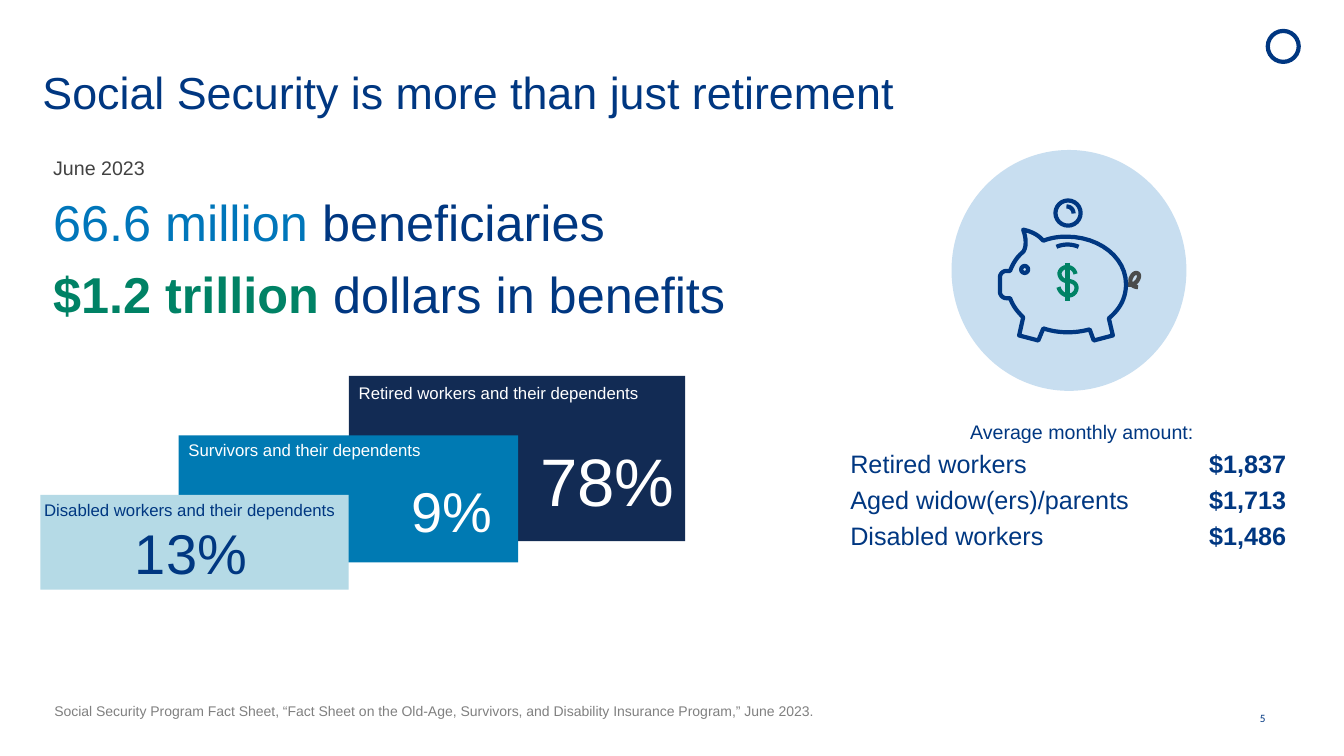
from dataclasses import dataclass
from lxml.etree import SubElement
from pptx import Presentation
from pptx.dml.color import RGBColor
from pptx.enum.shapes import MSO_SHAPE
from pptx.enum.text import MSO_ANCHOR, PP_ALIGN
from pptx.oxml.ns import qn
from pptx.util import Cm, Pt


@dataclass(frozen=True)
class Theme:
    font: str = "Arial"
    number_font: str = "Calibri"
    navy: str = "003781"
    midnight: str = "122B54"
    blue: str = "007AB3"
    bright: str = "0076BA"
    green: str = "008265"
    sky: str = "B5DAE6"
    pale: str = "C8DEF0"
    charcoal: str = "424242"
    tail: str = "4B4C4C"
    gray: str = "808080"
    white: str = "FFFFFF"
    title: int = 32
    headline: int = 36
    figure: int = 48
    small_figure: int = 40
    row: int = 18
    intro: int = 14
    label: int = 12
    source: int = 10
    number: int = 8
    stroke: int = 3


theme = Theme()

TITLE = "Social Security is more than just retirement"
DATE = "June 2023"
HEADLINES = [
    ("66.6 million ", theme.bright, False, "beneficiaries"),
    ("$1.2 trillion ", theme.green, True, "dollars in benefits"),
]
AMOUNT_HEADING = "Average monthly amount:"
AMOUNTS = [
    ("Retired workers", "$1,837"),
    ("Aged widow(ers)/parents", "$1,713"),
    ("Disabled workers", "$1,486"),
]
SOURCE = ("Social Security Program Fact Sheet, “Fact Sheet on the Old-Age, Survivors, "
          "and Disability Insurance Program,” June 2023.")
PAGE_NUMBER = "5"

CARDS = [
    ("Retired workers and their dependents", "78%", theme.midnight, theme.white, theme.figure,
     (8.79, 9.47, 8.48, 4.17), (8.79, 9.58, 7.75, 1.02), (12.93, 10.77, 4.32, 2.87)),
    ("Survivors and their dependents", "9%", theme.blue, theme.white, theme.small_figure,
     (4.5, 10.97, 8.56, 3.2), (4.5, 11.02, 9.04, 1.17), (8.48, 11.33, 4.17, 3.25)),
    ("Disabled workers and their dependents", "13%", theme.sky, theme.navy, theme.small_figure,
     (1.02, 12.47, 7.77, 2.39), (0.86, 12.52, 8.2, 1.19), (2.41, 12.83, 4.06, 2.39)),
]

ICON_LEFT, ICON_TOP, ICON_UNIT = 25.15, 5.0, 0.0254
ICON_RINGS = [(57, 2, 25), (23, 67, 7)]
ICON_STROKES = [
    (theme.tail, False, [(127, 85), (135, 88, 140, 81, 140, 77), (140, 73, 135, 73, 133, 77),
                         (129, 83, 133, 88, 139, 88)]),
    (theme.navy, True, [
        (2, 78), (2, 75, 5, 72, 8, 72), (12, 72), (15, 64, 19, 58, 25, 53),
        (26, 52, 30, 45, 25, 31), (38, 34, 42, 39, 45, 42), (53, 39, 60, 38, 68, 38),
        (101, 38, 127, 59, 127, 85), (127, 98, 122, 109, 110, 119), (114, 136), (95, 141),
        (91, 130), (76, 134, 60, 134, 45, 129), (40, 141), (21, 136), (25, 118),
        (19, 112, 15, 107, 12, 99), (8, 99), (5, 99, 2, 96, 2, 93)]),
    (theme.navy, False, [(58, 48), (65, 45, 73, 45, 80, 48)]),
    (theme.navy, False, [(68, 8), (72, 8, 75, 11, 75, 15)]),
    (theme.green, False, [(69, 64), (69, 102)]),
    (theme.green, False, [(77, 75), (75, 66, 63, 66, 61, 74), (61, 78, 64, 82, 69, 82),
                          (75, 82, 78, 85, 78, 89), (77, 99, 63, 99, 60, 88)]),
]
CURVE_STEPS = 12

deck = Presentation()
deck.slide_width, deck.slide_height = Cm(33.87), Cm(19.05)
page = deck.slides.add_slide(deck.slide_layouts[6])


def color(value):
    return RGBColor.from_string(value)


def text_box(place, anchor=MSO_ANCHOR.TOP, margins=(0.25, 0.13)):
    frame = page.shapes.add_textbox(*map(Cm, place)).text_frame
    frame.word_wrap = True
    frame.vertical_anchor = anchor
    frame.margin_left = frame.margin_right = Cm(margins[0])
    frame.margin_top = frame.margin_bottom = Cm(margins[1])
    return frame


def add_para(frame, spans, align=PP_ALIGN.LEFT, spacing=0.9, before=0, after=0, font=theme.font):
    first = frame.paragraphs[0]
    para = frame.add_paragraph() if first.runs else first
    para.alignment, para.line_spacing = align, spacing
    para.space_before, para.space_after = Pt(before), Pt(after)
    for text, size, tint, bold in spans:
        span = para.add_run()
        span.text = text
        span.font.name, span.font.size, span.font.bold = font, Pt(size), bold
        span.font.color.rgb = color(tint)
    return para


def add_tab(para, position):
    stops = SubElement(para._p.get_or_add_pPr(), qn("a:tabLst"))
    SubElement(stops, qn("a:tab"), pos=str(Cm(position)), algn="l")


def paint(shape, fill=None, line=None):
    shape.shadow.inherit = False
    if fill:
        shape.fill.solid()
        shape.fill.fore_color.rgb = color(fill)
    else:
        shape.fill.background()
    if line:
        shape.line.color.rgb = color(line)
        shape.line.width = Pt(theme.stroke)
        SubElement(shape.line._get_or_add_ln(), qn("a:round"))
    else:
        shape.line.fill.background()


def add_preset(kind, place, fill=None, line=None):
    paint(page.shapes.add_shape(kind, *map(Cm, place)), fill, line)


def trace(segments):
    points = [segments[0]]
    for segment in segments[1:]:
        if len(segment) == 2:
            points.append(segment)
            continue
        knots = [points[-1], segment[:2], segment[2:4], segment[4:]]
        for step in range(1, CURVE_STEPS + 1):
            t = step / CURVE_STEPS
            weights = ((1 - t) ** 3, 3 * t * (1 - t) ** 2, 3 * t * t * (1 - t), t ** 3)
            points.append(tuple(sum(w * knot[axis] for w, knot in zip(weights, knots))
                                for axis in (0, 1)))
    return points


def icon_point(x, y):
    return Cm(ICON_LEFT + x * ICON_UNIT), Cm(ICON_TOP + y * ICON_UNIT)


def add_piggy_bank():
    add_preset(MSO_SHAPE.OVAL, (23.98, 3.78, 5.92, 6.07), theme.pale)
    for tint, closed, segments in ICON_STROKES:
        points = [icon_point(*point) for point in trace(segments)]
        outline = page.shapes.build_freeform(*points[0])
        outline.add_line_segments(points[1:], close=closed)
        paint(outline.convert_to_shape(), line=tint)
    for x, y, size in ICON_RINGS:
        place = (ICON_LEFT + x * ICON_UNIT, ICON_TOP + y * ICON_UNIT,
                 size * ICON_UNIT, size * ICON_UNIT)
        add_preset(MSO_SHAPE.OVAL, place, line=theme.navy)


add_preset(MSO_SHAPE.OVAL, (31.95, 0.78, 0.78, 0.78), line=theme.navy)
add_para(text_box((1.07, 0.74, 30.43, 2.26), MSO_ANCHOR.BOTTOM, (0, 0)),
         [(TITLE, theme.title, theme.navy, False)])

summary = text_box((1.09, 3.78, 22, 6.5))
add_para(summary, [(DATE, theme.intro, theme.charcoal, False)], spacing=1.05)
for amount, tint, bold, subject in HEADLINES:
    add_para(summary, [(amount, theme.headline, tint, bold),
                       (subject, theme.headline, theme.navy, False)], spacing=1.05, before=6)

add_piggy_bank()

monthly = text_box((21.18, 10.52, 12.17, 4.34))
add_para(monthly, [(AMOUNT_HEADING, theme.intro, theme.navy, False)], PP_ALIGN.CENTER, after=6)
for group, amount in AMOUNTS:
    row = add_para(monthly, [(group + "\t", theme.row, theme.navy, False),
                             (amount, theme.row, theme.navy, True)], after=6)
    add_tab(row, 9.04)

for label, share, fill, ink, size, card, label_place, share_place in CARDS:
    add_preset(MSO_SHAPE.RECTANGLE, card, fill)
    add_para(text_box(label_place), [(label, theme.label, ink, False)])
    add_para(text_box(share_place, MSO_ANCHOR.MIDDLE), [(share, size, ink, False)],
             PP_ALIGN.RIGHT)

add_para(text_box((1.12, 17.58, 22.2, 0.69)), [(SOURCE, theme.source, theme.gray, False)],
         spacing=1.0)
add_para(text_box((31.75, 17.58, 1.02, 1.02), MSO_ANCHOR.MIDDLE, (0, 0.15)),
         [(PAGE_NUMBER, theme.number, theme.navy, False)], spacing=1.0, font=theme.number_font)

deck.save("out.pptx")
